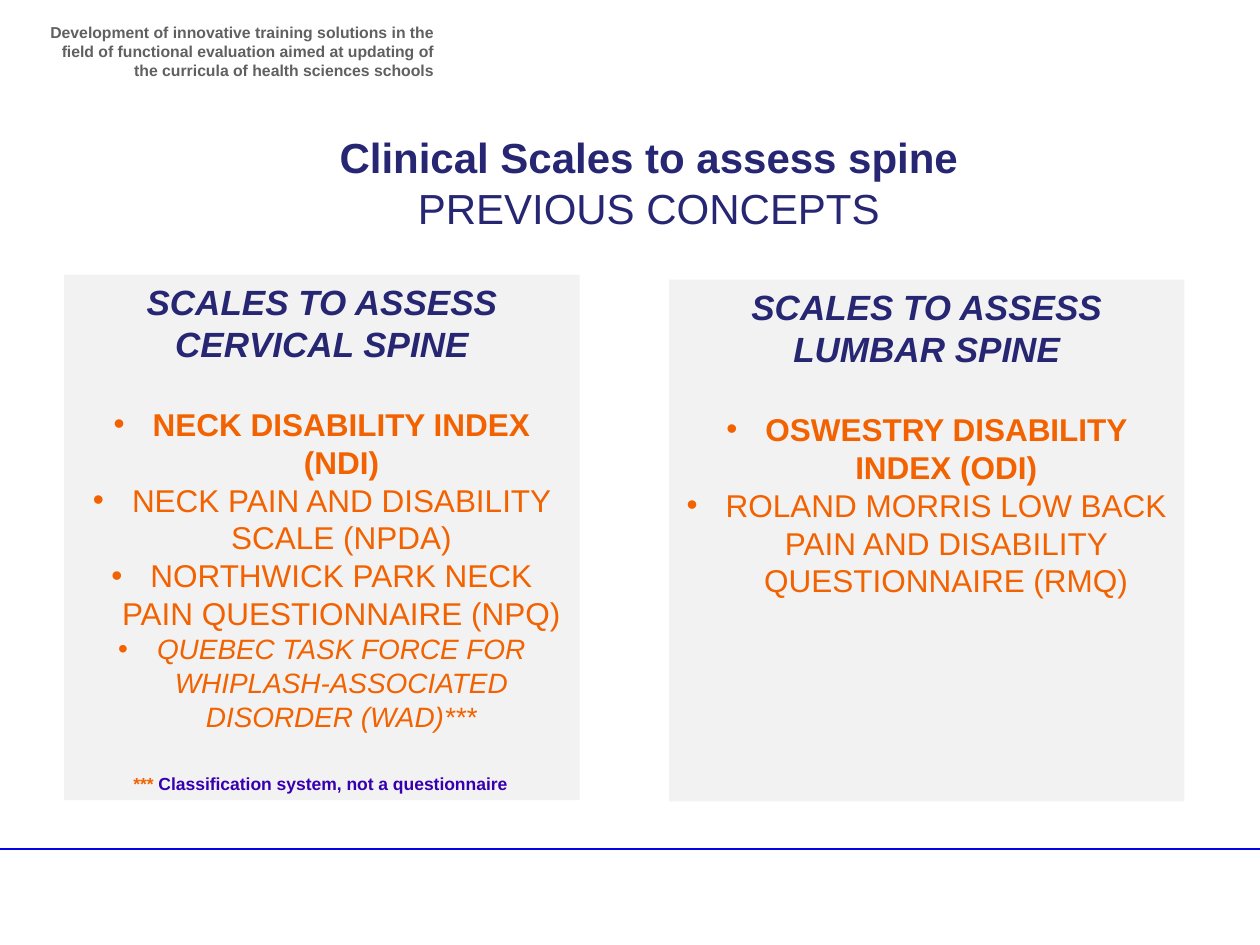
from lxml import etree
from pptx import Presentation
from pptx.dml.color import RGBColor
from pptx.enum.shapes import MSO_CONNECTOR, MSO_SHAPE
from pptx.enum.text import MSO_ANCHOR, PP_ALIGN
from pptx.oxml.ns import qn
from pptx.util import Inches, Pt

NAVY = RGBColor(0x26, 0x26, 0x73)
ORANGE = RGBColor(0xF2, 0x62, 0x00)
VIOLET = RGBColor(0x36, 0x00, 0xB0)
GRAY = RGBColor(0x60, 0x60, 0x60)
PANEL = RGBColor(0xF2, 0xF2, 0xF2)
RULE = RGBColor(0x04, 0x04, 0xE6)

PROJECT = ("Development of innovative training solutions in the field of functional "
           "evaluation aimed at updating of the curricula of health sciences schools")
TITLE = [("Clinical Scales to assess spine", True), ("PREVIOUS CONCEPTS", False)]
FOOTNOTE = [("*** ", ORANGE), ("Classification system, not a questionnaire", VIOLET)]

# Each scale: text, size, bold, italic
PANELS = [
    ((0.51, 2.18, 4.09, 4.17), "SCALES TO ASSESS CERVICAL SPINE", [
        ("NECK DISABILITY INDEX (NDI)", 18, True, False),
        ("NECK PAIN AND DISABILITY SCALE (NPDA)", 18, False, False),
        ("NORTHWICK PARK NECK PAIN QUESTIONNAIRE (NPQ)", 18, False, False),
        ("QUEBEC TASK FORCE FOR WHIPLASH-ASSOCIATED DISORDER (WAD)***", 16, False, True),
    ]),
    ((5.31, 2.22, 4.09, 4.14), "SCALES TO ASSESS LUMBAR SPINE", [
        ("OSWESTRY DISABILITY INDEX (ODI)", 18, True, False),
        ("ROLAND MORRIS LOW BACK PAIN AND DISABILITY QUESTIONNAIRE (RMQ)",
         18, False, False),
    ]),
]


def style(paragraph, size, color=None, bold=False, italic=False, align=PP_ALIGN.CENTER):
    paragraph.alignment = align
    font = paragraph.font
    font.name, font.size, font.bold, font.italic = "Arial", Pt(size), bold, italic
    if color is not None:
        font.color.rgb = color


def add_bullet(paragraph):
    properties = paragraph._p.get_or_add_pPr()
    properties.set("marL", str(Inches(0.31)))
    properties.set("indent", str(-Inches(0.31)))
    etree.SubElement(properties, qn("a:buFont")).set("typeface", "Arial")
    etree.SubElement(properties, qn("a:buChar")).set("char", "•")


def add_text_frame(slide, box, wrap=True, anchor=MSO_ANCHOR.TOP):
    frame = slide.shapes.add_textbox(*map(Inches, box)).text_frame
    frame.word_wrap = wrap
    frame.vertical_anchor = anchor
    return frame


def add_paragraph(frame, index):
    return frame.add_paragraph() if index else frame.paragraphs[0]


def add_panel(slide, box, heading, scales):
    panel = slide.shapes.add_shape(MSO_SHAPE.RECTANGLE, *map(Inches, box))
    panel.shadow.inherit = False
    panel.fill.solid()
    panel.fill.fore_color.rgb = PANEL
    panel.line.fill.background()
    frame = panel.text_frame
    frame.word_wrap = True
    frame.vertical_anchor = MSO_ANCHOR.TOP
    frame.paragraphs[0].text = heading
    style(frame.paragraphs[0], 20, NAVY, bold=True, italic=True)
    for index, (text, size, bold, italic) in enumerate(scales):
        paragraph = frame.add_paragraph()
        paragraph.text = text
        add_bullet(paragraph)
        style(paragraph, size, ORANGE, bold, italic)
        if index == 0:
            paragraph.space_before = Pt(23)


def main():
    presentation = Presentation()
    presentation.slide_width, presentation.slide_height = Inches(10), Inches(7.5)
    slide = presentation.slides.add_slide(presentation.slide_layouts[6])

    rule = slide.shapes.add_connector(
        MSO_CONNECTOR.STRAIGHT, Inches(-0.05), Inches(6.74), Inches(10), Inches(6.74))
    rule.line.color.rgb = RULE
    rule.line.width = Pt(1)
    etree.SubElement(rule._element.spPr, qn("a:effectLst"))

    project = add_text_frame(slide, (0.28, 0.13, 3.26, 0.47)).paragraphs[0]
    project.text = PROJECT
    style(project, 9, GRAY, bold=True, align=PP_ALIGN.RIGHT)

    title = add_text_frame(slide, (0.7, 0.99, 8.9, 0.91), anchor=MSO_ANCHOR.MIDDLE)
    for index, (text, bold) in enumerate(TITLE):
        paragraph = add_paragraph(title, index)
        paragraph.text = text
        style(paragraph, 24, NAVY, bold)

    for box, heading, scales in PANELS:
        add_panel(slide, box, heading, scales)

    footnote = add_text_frame(slide, (0.96, 6.06, 3.2, 0.28), wrap=False).paragraphs[0]
    style(footnote, 10, bold=True, align=PP_ALIGN.JUSTIFY)
    footnote.line_spacing = Pt(14)
    for text, color in FOOTNOTE:
        run = footnote.add_run()
        run.text = text
        run.font.color.rgb = color

    presentation.save("out.pptx")


if __name__ == "__main__":
    main()
